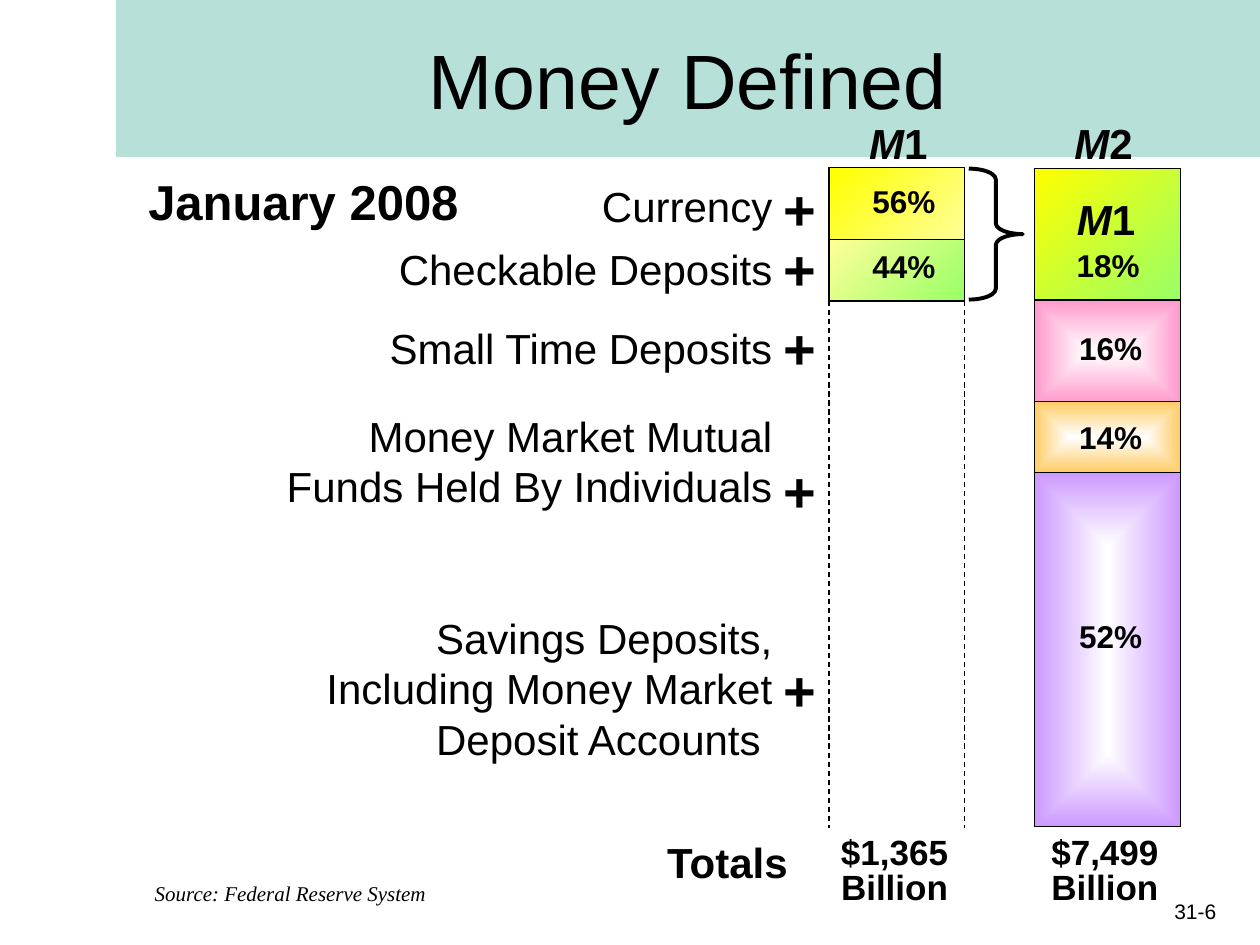
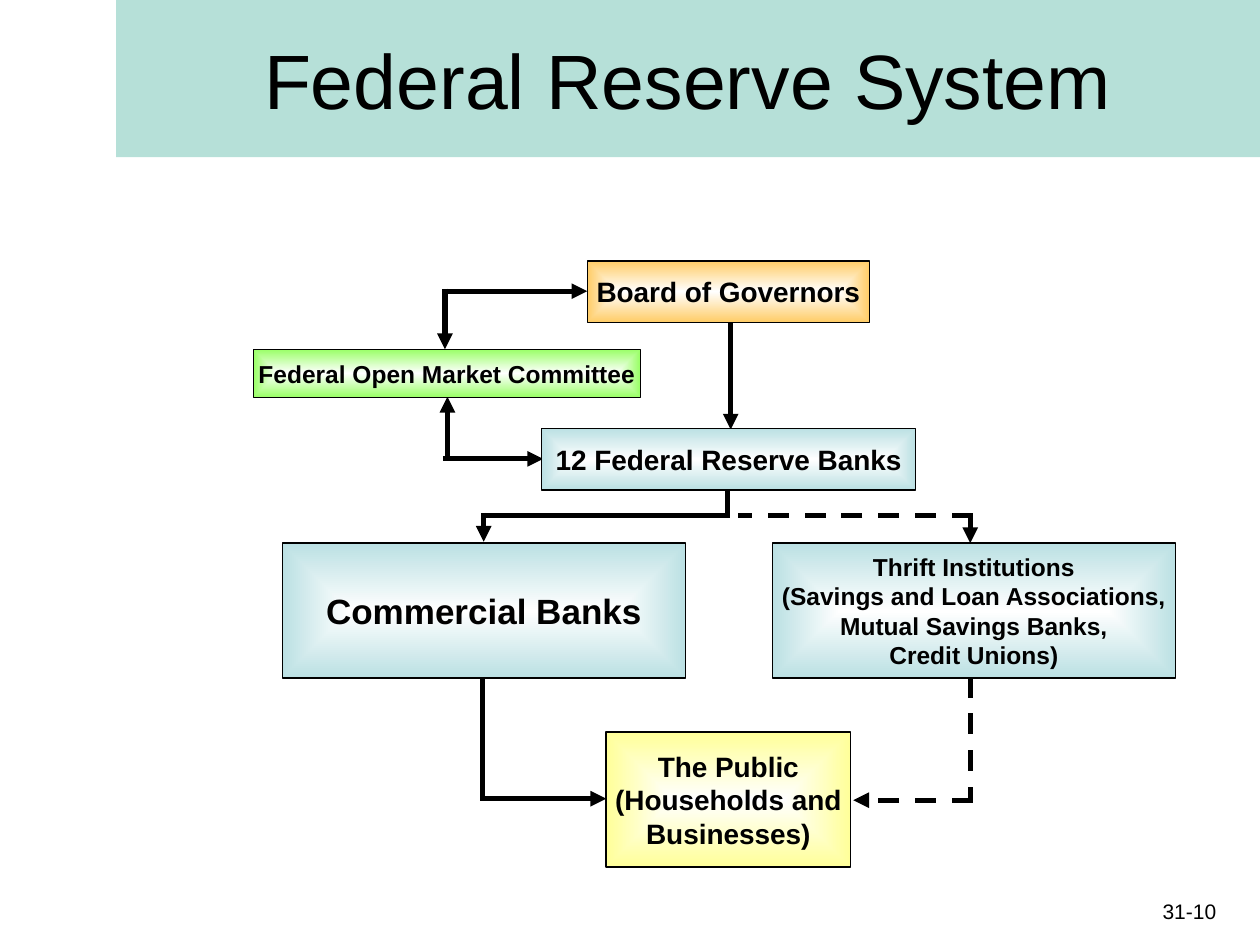
from dataclasses import dataclass

from lxml.etree import SubElement
from pptx import Presentation
from pptx.dml.color import RGBColor
from pptx.enum.dml import MSO_LINE
from pptx.enum.shapes import MSO_CONNECTOR, MSO_SHAPE
from pptx.enum.text import MSO_ANCHOR, MSO_AUTO_SIZE, PP_ALIGN
from pptx.oxml.ns import qn
from pptx.util import Cm, Pt


@dataclass(frozen=True)
class Theme:
    """Colours, fonts and type sizes shared by the slides."""

    font: str = "Arial"
    source_font: str = "Times New Roman"
    ink: str = "000000"
    band: str = "B6E0D8"
    white: str = "FFFFFF"
    yellow: str = "FFFF00"
    pale_yellow: str = "FFFF99"
    green: str = "99FF66"
    pink: str = "FF99CC"
    orange: str = "FFCC66"
    purple: str = "CC99FF"
    blue: str = "BBE0E3"
    title: int = 44
    plus: int = 32
    date: int = 28
    label: int = 24
    large: int = 20
    percent: int = 18
    medium: int = 16
    small: int = 14
    note: int = 12
    thin: float = 0.75
    brace: float = 2.25
    thick: float = 3


THEME = Theme()


def color(value):
    """Return a colour from its hexadecimal value."""
    return RGBColor.from_string(value)


def lengths(*values):
    """Return the values as centimetre lengths."""
    return [Cm(value) for value in values]


def format_text(text_frame, size, bold=False, italic=False, font=THEME.font,
                align=PP_ALIGN.LEFT, spacing=None):
    """Format every paragraph and run of a text frame."""
    for paragraph in text_frame.paragraphs:
        paragraph.alignment = align
        if spacing:
            paragraph.line_spacing = spacing
        for run in paragraph.runs:
            run.font.name = font
            run.font.size = Pt(size)
            run.font.bold = bold
            run.font.italic = italic
            run.font.color.rgb = color(THEME.ink)


def add_text(slide, text, box, size, wrap=False, **style):
    """Add a text box and return its text frame."""
    text_frame = slide.shapes.add_textbox(*lengths(*box)).text_frame
    text_frame.text = text
    text_frame.word_wrap = wrap
    text_frame.auto_size = MSO_AUTO_SIZE.NONE if wrap else MSO_AUTO_SIZE.SHAPE_TO_FIT_TEXT
    format_text(text_frame, size, **style)
    return text_frame


def add_money_heading(slide, number, left, top):
    """Add a bold M in italics followed by an upright number."""
    text_frame = add_text(slide, "M", (left, top, 1.75, 1.3), THEME.label)
    paragraph = text_frame.paragraphs[0]
    paragraph.add_run().text = number
    format_text(text_frame, THEME.label, bold=True)
    paragraph.runs[0].font.italic = True


def add_outlined_shape(slide, kind, box, width=THEME.thin):
    """Add a shape with a black outline and no shadow."""
    shape = slide.shapes.add_shape(kind, *lengths(*box))
    shape.shadow.inherit = False
    shape.line.color.rgb = color(THEME.ink)
    shape.line.width = Pt(width)
    return shape


def add_gradient_box(slide, box, start, end):
    """Add a box shaded diagonally, or from a white centre outwards."""
    shape = add_outlined_shape(slide, MSO_SHAPE.RECTANGLE, box)
    shape.fill.gradient()
    for stop, value in zip(shape.fill.gradient_stops, (start, end)):
        stop.color.rgb = color(value)
    shape.fill.gradient_angle = 315
    if start == THEME.white:
        gradient = shape._element.spPr.find(qn("a:gradFill"))
        gradient.remove(gradient.find(qn("a:lin")))
        center = SubElement(gradient, qn("a:path"), {"path": "shape"})
        SubElement(center, qn("a:fillToRect"), dict.fromkeys("ltrb", "50000"))
    return shape


def add_institution(slide, text, box, end, size):
    """Add a centre-lit box with bold centred text."""
    text_frame = add_gradient_box(slide, box, THEME.white, end).text_frame
    text_frame.text = text
    text_frame.word_wrap = False
    text_frame.vertical_anchor = MSO_ANCHOR.MIDDLE
    format_text(text_frame, size, bold=True, align=PP_ALIGN.CENTER)


def add_line(slide, points, width=THEME.thick, arrow=False, dashed=False):
    """Add a straight line, optionally dashed or ending in an arrow."""
    connector = slide.shapes.add_connector(MSO_CONNECTOR.STRAIGHT, *lengths(*points))
    connector.line.color.rgb = color(THEME.ink)
    connector.line.width = Pt(width)
    if dashed:
        connector.line.dash_style = MSO_LINE.DASH
    properties = connector._element.spPr
    if arrow:
        SubElement(properties.find(qn("a:ln")), qn("a:tailEnd"), {"type": "triangle"})
    SubElement(properties, qn("a:effectLst"))


def add_titled_slide(presentation, title, number):
    """Add a slide with the title band and the page number."""
    slide = presentation.slides.add_slide(presentation.slide_layouts[5])
    shape = slide.shapes.title
    shape.left, shape.top, shape.width, shape.height = lengths(2.34, 0, 23.06, 3.17)
    shape.fill.solid()
    shape.fill.fore_color.rgb = color(THEME.band)
    shape.text_frame.text = title
    shape.text_frame.vertical_anchor = MSO_ANCHOR.MIDDLE
    shape.text_frame.auto_size = MSO_AUTO_SIZE.NONE
    format_text(shape.text_frame, THEME.title, align=PP_ALIGN.CENTER)
    add_text(slide, number, (18.85, 17.98, 5.92, 0.69), THEME.note, wrap=True,
             align=PP_ALIGN.RIGHT)
    return slide


def add_money_columns(slide):
    """Add the M1 and M2 columns with their shares, headings and totals."""
    m1_left, m1_width, m2_left, m2_width = 16.71, 2.74, 20.85, 2.95
    for left, width, top, height, start, end in (
        (m2_left, m2_width, 3.4, 2.64, THEME.yellow, THEME.green),
        (m2_left, m2_width, 6.05, 2.08, THEME.white, THEME.pink),
        (m2_left, m2_width, 9.53, 7.14, THEME.white, THEME.purple),
        (m2_left, m2_width, 8.1, 1.42, THEME.white, THEME.orange),
        (m1_left, m1_width, 3.38, 1.45, THEME.yellow, THEME.pale_yellow),
        (m1_left, m1_width, 4.83, 1.24, THEME.pale_yellow, THEME.green),
    ):
        add_gradient_box(slide, (left, top, width, height), start, end)
    for share, left, top in (
        ("56%", 17.32, 3.63), ("44%", 17.32, 4.95), ("18%", 21.44, 4.93),
        ("16%", 21.49, 6.6), ("14%", 21.49, 8.38), ("52%", 21.49, 12.4),
    ):
        add_text(slide, share, (left, top, 1.8, 0.97), THEME.percent, bold=True,
                 align=PP_ALIGN.CENTER, spacing=0.9)
    for number, left, top in (("1", 17.27, 2.24), ("2", 21.41, 2.24), ("1", 21.46, 3.78)):
        add_money_heading(slide, number, left, top)
    for total, left in (("$1,365\nBillion", 16.69), ("$7,499\nBillion", 20.93)):
        add_text(slide, total, (left, 16.74, 2.69, 1.73), THEME.large, bold=True,
                 align=PP_ALIGN.CENTER, spacing=0.85)
    for x in (m1_left, m1_left + m1_width):
        add_line(slide, (x, 6.07, x, 16.69), THEME.thin, dashed=True)
    brace = add_outlined_shape(slide, MSO_SHAPE.RIGHT_BRACE, (19.53, 3.4, 1.09, 2.64),
                               THEME.brace)
    brace.adjustments[0] = 0.2
    brace.fill.background()


def add_money_components(slide):
    """Add the right-aligned component names, each with its plus sign."""
    right_edge = 15.82
    for name, width, top, plus_top in (
        ("Currency", 3.99, 3.51, 3.4),
        ("Checkable Deposits", 8.13, 4.78, 4.6),
        ("Small Time Deposits", 8.31, 6.38, 6.2),
        ("Money Market Mutual\nFunds Held By Individuals", 10.82, 8.15, 9.07),
        ("Savings Deposits,\nIncluding Money Market\nDeposit Accounts ", 11.48, 12.22, 13.08),
    ):
        height = 1.3 + 1.02 * name.count("\n")
        add_text(slide, name, (right_edge - width, top, width, height), THEME.label,
                 align=PP_ALIGN.RIGHT)
        add_text(slide, "+", (15.54, plus_top, 1.17, 1.6), THEME.plus, bold=True)


def build_money_slide(presentation):
    """Build the slide that defines M1 and M2."""
    slide = add_titled_slide(presentation, "Money Defined", "31-6")
    add_money_columns(slide)
    add_money_components(slide)
    add_text(slide, "January 2008", (2.74, 3.33, 6.83, 1.45), THEME.date, bold=True)
    add_text(slide, "Totals", (13.16, 16.74, 2.97, 1.3), THEME.label, bold=True,
             align=PP_ALIGN.RIGHT)
    add_text(slide, "Source: Federal Reserve System", (2.87, 17.63, 6.02, 0.76),
             THEME.note, italic=True, font=THEME.source_font)


def build_reserve_slide(presentation):
    """Build the organisation chart of the reserve system."""
    slide = add_titled_slide(presentation, "Federal Reserve System", "31-10")
    for points in (
        (14.66, 9.88, 14.66, 10.44),
        (14.66, 10.39, 9.78, 10.39),
        (9.73, 13.67, 9.73, 16.08),
    ):
        add_line(slide, points)
    for points in (
        (14.73, 6.48, 14.73, 8.66),
        (9.75, 10.34, 9.75, 10.92),
        (19.56, 10.36, 19.56, 10.95),
        (9.68, 16.1, 12.22, 16.1),
        (8.97, 5.87, 11.84, 5.87),
        (8.97, 5.82, 8.97, 7.04),
        (8.94, 9.25, 10.95, 9.25),
        (9.02, 9.22, 9.02, 8),
    ):
        add_line(slide, points, arrow=True)
    add_line(slide, (19.61, 10.39, 14.88, 10.39), dashed=True)
    add_line(slide, (19.56, 13.64, 19.56, 16.13), dashed=True)
    add_line(slide, (19.61, 16.13, 17.2, 16.13), arrow=True, dashed=True)
    for text, box, end, size in (
        ("Commercial Banks", (5.69, 10.95, 8.13, 2.72), THEME.blue, THEME.large),
        ("Thrift Institutions\n(Savings and Loan Associations,\n"
         "Mutual Savings Banks,\nCredit Unions)",
         (15.57, 10.95, 8.13, 2.72), THEME.blue, THEME.small),
        ("The Public\n(Households and\nBusinesses)",
         (12.22, 14.76, 4.93, 2.72), THEME.pale_yellow, THEME.medium),
        ("12 Federal Reserve Banks", (10.92, 8.64, 7.54, 1.24), THEME.blue, THEME.medium),
        ("Board of Governors", (11.84, 5.26, 5.69, 1.24), THEME.orange, THEME.medium),
        ("Federal Open Market Committee", (5.11, 7.04, 7.8, 0.97), THEME.green, THEME.small),
    ):
        add_institution(slide, text, box, end, size)


def main():
    """Build and save the presentation."""
    presentation = Presentation()
    presentation.slide_width, presentation.slide_height = lengths(25.4, 19.05)
    build_money_slide(presentation)
    build_reserve_slide(presentation)
    presentation.save("out.pptx")


if __name__ == "__main__":
    main()
